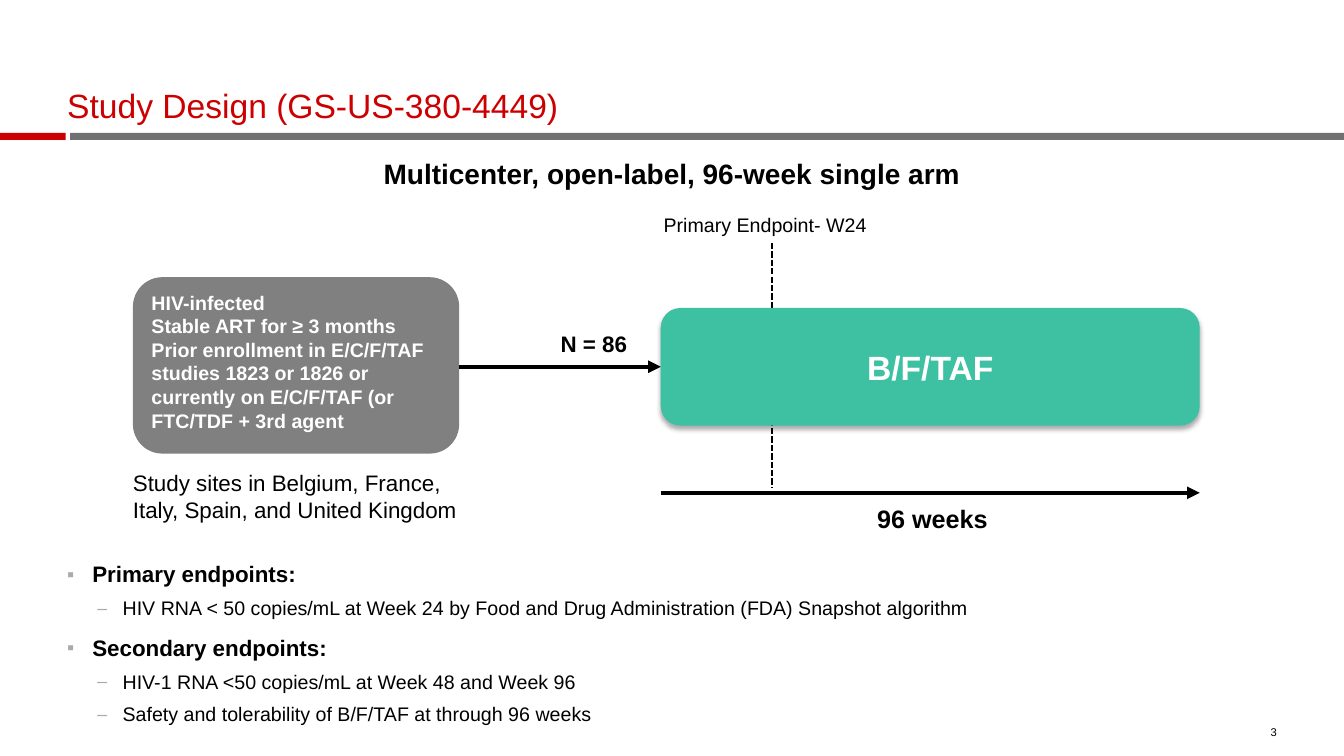
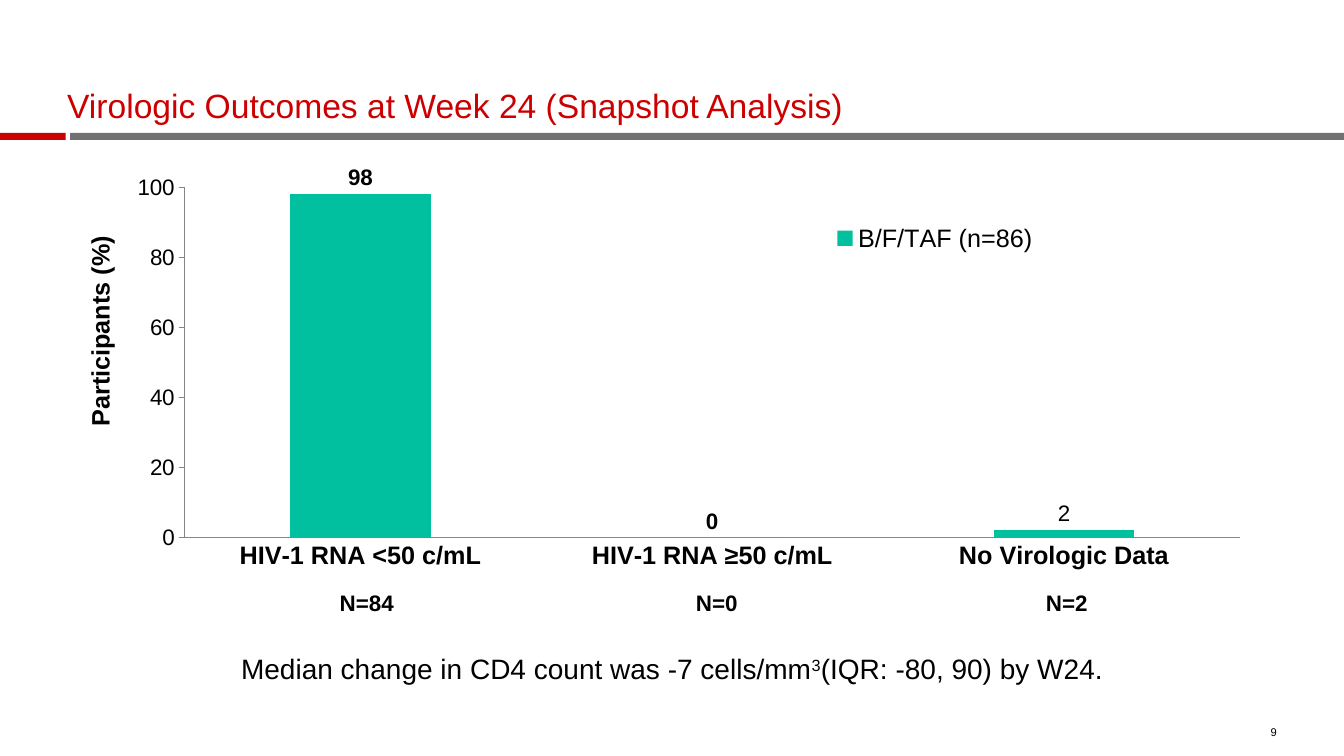
"""Build two slides on the design and the Week 24 outcomes of a clinical study."""
import pptx
import pptx.chart.data
import pptx.dml.color
import pptx.enum.chart
import pptx.enum.dml
import pptx.enum.shapes
import pptx.enum.text
import pptx.oxml
import pptx.oxml.ns
import pptx.util

Pt = pptx.util.Pt
RGBColor = pptx.dml.color.RGBColor
Align = pptx.enum.text.PP_ALIGN
Anchor = pptx.enum.text.MSO_ANCHOR
Shape = pptx.enum.shapes.MSO_SHAPE

RED = RGBColor(0xCC, 0x00, 0x00)
BAND_GRAY = RGBColor(0x71, 0x71, 0x71)
BOX_GRAY = RGBColor(0x80, 0x80, 0x80)
AXIS_GRAY = RGBColor(0x86, 0x86, 0x86)
GREEN = RGBColor(0x3D, 0xC1, 0xA2)
BAR_GREEN = RGBColor(0x00, 0xC0, 0xA0)
BLACK = RGBColor(0x00, 0x00, 0x00)
WHITE = RGBColor(0xFF, 0xFF, 0xFF)

FONT = "Arial"
WIDTH, HEIGHT = 960, 540
MARGIN = 48
ARM_LEFT, ARM_WIDTH = 472, 385
CHART_TOP, CHART_WIDTH, CHART_HEIGHT = 102, 838, 317

ENDPOINTS = [
    (0, "Primary endpoints:"),
    (1, "HIV RNA < 50 copies/mL at Week 24 by Food and Drug Administration (FDA) Snapshot algorithm"),
    (0, "Secondary endpoints:"),
    (1, "HIV-1 RNA <50 copies/mL at Week 48 and Week 96"),
    (1, "Safety and tolerability of B/F/TAF at through 96 weeks"),
]
BULLETS = [("▪", 18, 16, 12), ("–", 39.6, 14, 8)]


def make_xml(prefix, text):
    """Return an XML element whose first tag gets the namespace of prefix."""
    tag, rest = text[1:].split(" ", 1)
    return pptx.oxml.parse_xml(f"<{tag} {pptx.oxml.ns.nsdecls(prefix)} {rest}")


def place(shape, left, top, width, height):
    """Move and size a shape, in points."""
    shape.left, shape.top = Pt(left), Pt(top)
    shape.width, shape.height = Pt(width), Pt(height)


def set_font(font, size, color=BLACK, bold=False):
    """Apply the common typeface with a size, colour and weight."""
    font.name, font.size, font.bold = FONT, Pt(size), bold
    font.color.rgb = color


def set_frame(frame, inset=(0, 0), anchor=Anchor.TOP):
    """Wrap a text frame and set its side and vertical insets and its anchor."""
    frame.word_wrap = True
    frame.auto_size = pptx.enum.text.MSO_AUTO_SIZE.NONE
    frame.margin_left = frame.margin_right = Pt(inset[0])
    frame.margin_top = frame.margin_bottom = Pt(inset[1])
    frame.vertical_anchor = anchor


def write(frame, text, size, color=BLACK, bold=False, align=Align.LEFT, spacing=1.0):
    """Write one paragraph for each line of text."""
    frame.text = text
    for para in frame.paragraphs:
        para.alignment, para.line_spacing = align, spacing
        set_font(para.font, size, color, bold)


def add_label(page, area, text, size, inset=(0, 0), anchor=Anchor.TOP, **style):
    """Add a text box."""
    box = page.shapes.add_textbox(*map(Pt, area))
    set_frame(box.text_frame, inset, anchor)
    write(box.text_frame, text, size, **style)
    return box


def add_block(page, kind, area, color):
    """Add a filled shape without outline or shadow."""
    block = page.shapes.add_shape(kind, *map(Pt, area))
    block.shadow.inherit = False
    block.fill.solid()
    block.fill.fore_color.rgb = color
    block.line.fill.background()
    return block


def add_line(page, start, end, weight, dashed=False, arrow=False):
    """Add a straight black line, dashed or with an arrowhead on request."""
    line = page.shapes.add_connector(
        pptx.enum.shapes.MSO_CONNECTOR.STRAIGHT, *map(Pt, start + end))
    line.line.color.rgb = BLACK
    line.line.width = Pt(weight)
    if dashed:
        line.line.dash_style = pptx.enum.dml.MSO_LINE.SQUARE_DOT
    properties = line.element.spPr
    if arrow:
        outline = properties.find(pptx.oxml.ns.qn("a:ln"))
        outline.append(make_xml("a", '<a:tailEnd type="triangle"/>'))
    properties.append(make_xml("a", "<a:effectLst />"))


def add_soft_shadow(block):
    """Give a shape a soft shadow that falls straight down."""
    effects = block.element.spPr.find(pptx.oxml.ns.qn("a:effectLst"))
    effects.append(make_xml(
        "a", '<a:outerShdw blurRad="44450" dist="27940" dir="5400000" rotWithShape="0">'
        '<a:srgbClr val="000000"><a:alpha val="32000"/></a:srgbClr></a:outerShdw>'))


def add_page(deck, layout_index, title, number):
    """Add a page with its title and page number."""
    page = deck.slides.add_slide(deck.slide_layouts[layout_index])
    heading = page.shapes.title
    place(heading, MARGIN, 37, WIDTH - 2 * MARGIN, 53)
    set_frame(heading.text_frame, anchor=Anchor.BOTTOM)
    write(heading.text_frame, title, 24, RED, spacing=0.9)
    add_label(page, (886, 515, 26, 13), number, 8, anchor=Anchor.BOTTOM, align=Align.RIGHT)
    return page


def add_master_bands(deck, page):
    """Draw the title bands and hand them to the slide master."""
    for left, width, color in ((50, WIDTH - 50, BAND_GRAY), (0, 47, RED)):
        band = add_block(page, Shape.RECTANGLE, (left, 95, width, 5), color)
        deck.slide_master.shapes.element.append(band.element)


def add_bullets(body, items):
    """Fill the body placeholder with a two-level list."""
    set_frame(body.text_frame)
    body.text_frame.text = "\n".join(text for _, text in items)
    elements = body.element.xpath(".//a:p")
    for (level, _), para, element in zip(items, body.text_frame.paragraphs, elements):
        mark, indent, size, space = BULLETS[level]
        para.level = level
        properties = element.get_or_add_pPr()
        properties.set("marL", str(Pt(indent)))
        properties.set("indent", str(-Pt(18)))
        for bullet in ('<a:buClr ><a:srgbClr val="AAAAAA"/></a:buClr>',
                       '<a:buSzPct val="90000"/>',
                       f'<a:buFont typeface="{FONT}"/>',
                       f'<a:buChar char="{mark}"/>'):
            properties.append(make_xml("a", bullet))
        para.alignment, para.line_spacing = Align.LEFT, 0.9
        para.space_before = Pt(space)
        set_font(para.font, size, bold=level == 0)


def set_layout(chart, query, index, **numbers):
    """Fix the place of a chart part, in fractions of the chart."""
    part = chart.element.xpath(query)[0]
    for old in part.findall(pptx.oxml.ns.qn("c:layout")):
        part.remove(old)
    target = '<c:layoutTarget val="inner"/>' if index == 0 else ""
    modes = "".join(f'<c:{key}Mode val="edge"/>' for key in "xy")
    values = "".join(f'<c:{key} val="{value}"/>' for key, value in numbers.items())
    part.insert(index, make_xml(
        "c", f"<c:layout ><c:manualLayout>{target}{modes}{values}</c:manualLayout></c:layout>"))


def style_axes(chart):
    """Format both axes and the value axis title."""
    for axis, size, bold in ((chart.category_axis, 18, True), (chart.value_axis, 16, False)):
        set_font(axis.tick_labels.font, size, bold=bold)
        axis.has_major_gridlines = False
        axis.major_tick_mark = pptx.enum.chart.XL_TICK_MARK.NONE
        axis.format.line.color.rgb = AXIS_GRAY
        axis.format.line.width = Pt(0.75)
    scale = chart.value_axis
    scale.major_tick_mark = pptx.enum.chart.XL_TICK_MARK.OUTSIDE
    scale.minimum_scale, scale.maximum_scale, scale.major_unit = 0, 100, 20
    write(scale.axis_title.text_frame, "Participants (%)", 18, bold=True, align=Align.CENTER)
    chart.element.xpath(".//c:valAx/c:title//a:bodyPr")[0].set("rot", "-5400000")
    set_layout(chart, ".//c:valAx/c:title", 1, x=0.01, y=0.2)


def add_outcome_chart(page):
    """Add the column chart of virologic outcomes."""
    data = pptx.chart.data.CategoryChartData()
    data.categories = ["HIV-1 RNA <50 c/mL", "HIV-1 RNA ≥50 c/mL", "No Virologic Data"]
    data.add_series("B/F/TAF (n=86)", (98, 0, 2.3))
    chart = page.shapes.add_chart(
        pptx.enum.chart.XL_CHART_TYPE.COLUMN_CLUSTERED,
        Pt(MARGIN), Pt(CHART_TOP), Pt(CHART_WIDTH), Pt(CHART_HEIGHT), data).chart
    chart.has_title = False
    set_font(chart.font, 18)
    style_axes(chart)

    plot = chart.plots[0]
    plot.gap_width, plot.vary_by_categories = 150, False
    series = plot.series[0]
    series.format.fill.solid()
    series.format.fill.fore_color.rgb = BAR_GREEN
    above = pptx.enum.chart.XL_LABEL_POSITION.OUTSIDE_END
    labels = series.data_labels
    labels.show_value, labels.position = True, above
    set_font(labels.font, 16, bold=True)
    rounded = series.points[2].data_label
    write(rounded.text_frame, "2", 16, align=Align.CENTER)
    rounded.position = above

    chart.has_legend = True
    chart.legend.position = pptx.enum.chart.XL_LEGEND_POSITION.RIGHT
    chart.legend.include_in_layout = False
    set_font(chart.legend.font, 18)
    set_layout(chart, ".//c:legend", 1, x=0.65, y=0.17, w=0.18, h=0.09)
    set_layout(chart, ".//c:plotArea", 0, x=0.1, y=0.1, w=0.9, h=0.79)


def build_design(page):
    """Draw the study flow and list the endpoints."""
    add_bullets(page.placeholders[1], ENDPOINTS)
    place(page.placeholders[1], MARGIN, 402.5, WIDTH - 2 * MARGIN, 130)
    add_line(page, (551.5, 173.5), (551.5, 348), 1.5, dashed=True)

    criteria = add_block(page, Shape.ROUNDED_RECTANGLE, (95, 198, 233, 126), BOX_GRAY)
    set_frame(criteria.text_frame, (7.2, 3.6))
    write(criteria.text_frame,
          "HIV-infected\nStable ART for ≥ 3 months\n"
          "Prior enrollment in E/C/F/TAF studies 1823 or 1826 or "
          "currently on E/C/F/TAF (or FTC/TDF + 3rd agent", 14, WHITE, True)
    add_line(page, (328, 262), (ARM_LEFT, 262), 3, arrow=True)

    arm = add_block(page, Shape.ROUNDED_RECTANGLE, (ARM_LEFT, 220, ARM_WIDTH, 84), GREEN)
    add_soft_shadow(arm)
    set_frame(arm.text_frame, (7.2, 3.6), Anchor.MIDDLE)
    write(arm.text_frame, "B/F/TAF", 24, WHITE, True, Align.CENTER)
    add_line(page, (ARM_LEFT, 352), (ARM_LEFT + ARM_WIDTH, 352), 3, arrow=True)

    add_label(page, (626.5, 362, 102, 30), "96 weeks", 18, bold=True, spacing=0.9)
    add_label(page, (474, 154, 192, 35), "Primary Endpoint- W24", 14, spacing=0.9)
    add_label(page, (400.5, 238, 76, 17), "N = 86", 16, bold=True, spacing=0.9)
    add_label(page, (114, 108, 732, 32), "Multicenter, open-label, 96-week single arm", 20,
              (7.2, 3.6), bold=True, align=Align.CENTER)
    add_label(page, (95, 335, 252, 39),
              "Study sites in Belgium, France, Italy, Spain, and United Kingdom", 16)


def build_outcomes(page):
    """Show the outcome chart with its counts and the CD4 note."""
    add_outcome_chart(page)
    for index, count in enumerate((84, 0, 2)):
        add_label(page, (234 + 250 * index, 420.5, 56, 29), f"N={count}", 16, (0, 3.6),
                  bold=True, align=Align.CENTER, spacing=0.85)
    note = add_label(page, (114, 462, 732, 32), "Median change in CD4 count was -7 cells/mm",
                     20, (7.2, 3.6), align=Align.CENTER)
    for text in ("3", "(IQR: -80, 90) by W24."):
        note.text_frame.paragraphs[0].add_run().text = text
    note.element.xpath(".//a:r")[1].get_or_add_rPr().set("baseline", "30000")


def main():
    """Build and save the deck."""
    deck = pptx.Presentation()
    deck.slide_width, deck.slide_height = Pt(WIDTH), Pt(HEIGHT)
    design = add_page(deck, 1, "Study Design (GS-US-380-4449)", "3")
    add_master_bands(deck, design)
    build_design(design)
    build_outcomes(add_page(deck, 5, "Virologic Outcomes at Week 24 (Snapshot Analysis)", "9"))
    deck.save("out.pptx")


if __name__ == "__main__":
    main()
